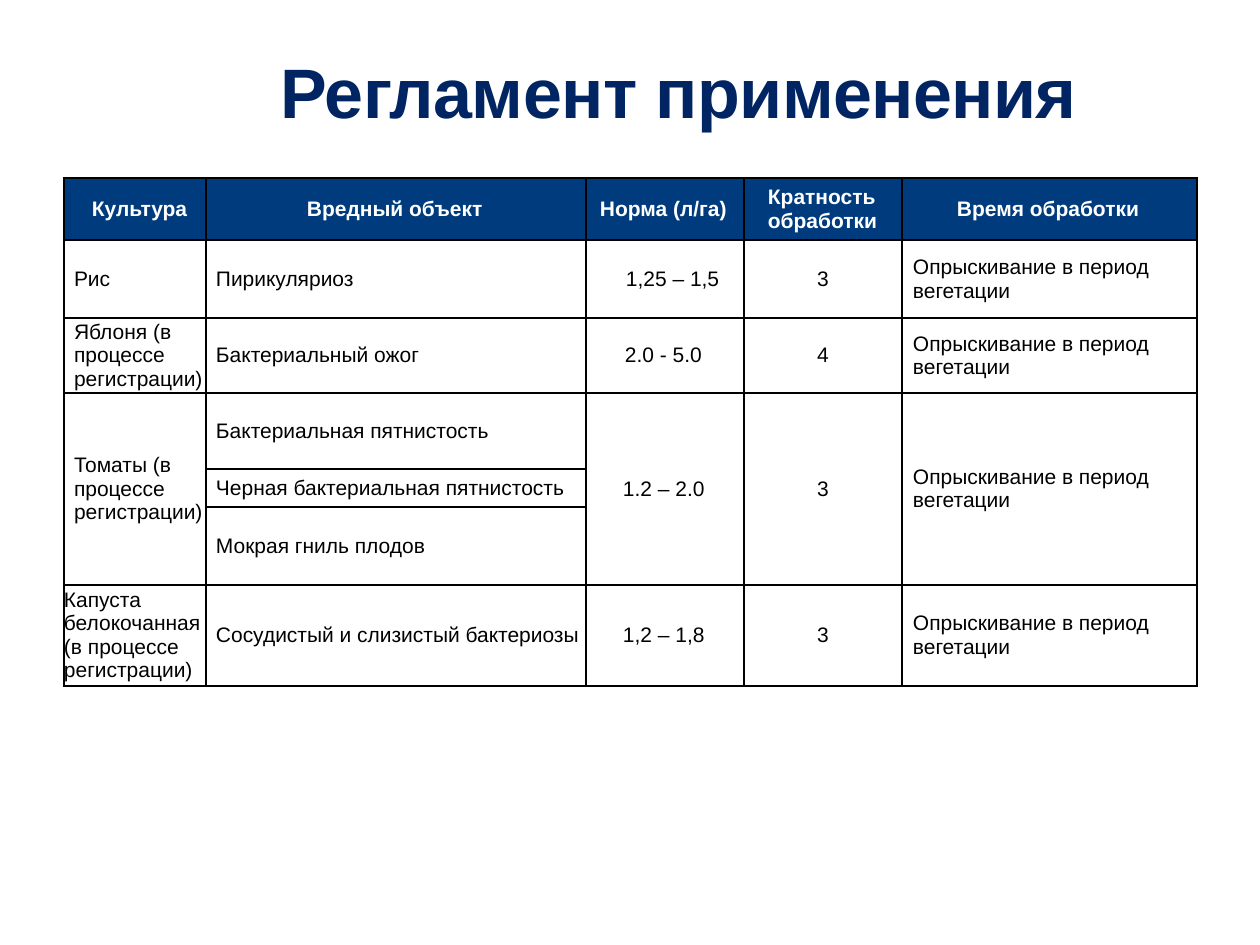
from lxml import etree
from pptx import Presentation
from pptx import util as u
from pptx.dml.color import RGBColor
from pptx.enum import text
from pptx.oxml.ns import qn

PX = 914400 // 126
COLUMNS = [142, 380, 158, 158, 295]
ROWS = [62, 78, 75, 76, 38, 78, 101]
TIMING = ("Опрыскивание в период вегетации", 11)
CENTRED = None

# Each cell is (text, left indent in px or CENTRED); an empty slot belongs to the merged cell above.
CELLS = [
    [("Культура", 28), ("Вредный объект", 101), ("Норма (л/га)", 14),
     ("Кратность обработки", 24), ("Время обработки", 55)],
    [("Рис", 10), ("Пирикуляриоз", 10), ("1,25 – 1,5", 40), ("3", CENTRED),
     ("Опрыскивание в период\nвегетации", 11)],
    [("Яблоня (в процессе регистрации)", 10), ("Бактериальный ожог", 10),
     ("2.0 - 5.0", 39), ("4", CENTRED), TIMING],
    [("Томаты (в процессе регистрации)", 10), ("Бактериальная пятнистость", 10),
     ("1.2 – 2.0", 37), ("3", CENTRED), TIMING],
    [None, ("Черная бактериальная пятнистость", 10), None, None, None],
    [None, ("Мокрая гниль плодов", 10), None, None, None],
    [("Капуста белокочанная (в процессе регистрации)", 0),
     ("Сосудистый и слизистый бактериозы", 10), ("1,2 – 1,8", 37),
     ("3", CENTRED), TIMING],
]
TOMATO_ROWS = (3, 5)


def px(*lengths):
    return [u.Emu(length * PX) for length in lengths]


def color(value):
    return RGBColor.from_string(value)


def style(para, size, value, bold, indent):
    """Sets the font and either the left indent or, for CENTRED, the alignment."""
    if indent is CENTRED:
        para.alignment = text.PP_ALIGN.CENTER
    else:
        properties = para._p.get_or_add_pPr()
        properties.set("marL", str(indent * PX))
        properties.set("indent", "0")
    para.font.name = "Arial"
    para.font.size = u.Pt(size)
    para.font.bold = bold
    para.font.color.rgb = color(value)


def add_borders(cell):
    properties = cell._tc.get_or_add_tcPr()
    for side in ("a:lnL", "a:lnR", "a:lnT", "a:lnB"):
        line = etree.SubElement(properties, qn(side), w=str(u.Pt(1)))
        fill = etree.SubElement(line, qn("a:solidFill"))
        etree.SubElement(fill, qn("a:srgbClr"), val="000000")


def fill_title(page, box):
    title = page.shapes.title
    title.left, title.top, title.width, title.height = px(*box)
    frame = title.text_frame
    frame.margin_left = frame.margin_right = frame.margin_top = frame.margin_bottom = 0
    frame.auto_size = text.MSO_AUTO_SIZE.NONE
    frame.vertical_anchor = text.MSO_ANCHOR.TOP
    frame.text = "Регламент применения"
    para = frame.paragraphs[0]
    style(para, 40, "002562", True, 126)
    para.alignment = text.PP_ALIGN.CENTER
    para.runs[0].font._element.set("spc", "-30")


def fill_cell(cell, content, header):
    cell.margin_left = cell.margin_right = cell.margin_top = cell.margin_bottom = 0
    cell.vertical_anchor = text.MSO_ANCHOR.MIDDLE
    add_borders(cell)
    if header:
        cell.fill.solid()
        cell.fill.fore_color.rgb = color("003C7D")
    else:
        cell.fill.background()
    words, indent = content or ("", 0)
    cell.text_frame.text = words
    for para in cell.text_frame.paragraphs:
        style(para, 12, "FFFFFF" if header else "000000", header, indent)


def add_rules_table(page, left, top):
    frame = page.shapes.add_table(
        len(ROWS), len(COLUMNS), *px(left, top, sum(COLUMNS), sum(ROWS)))
    table = frame.table
    table.horz_banding = False
    for column, width in zip(table.columns, px(*COLUMNS)):
        column.width = width
    for row, height in zip(table.rows, px(*ROWS)):
        row.height = height
    for r, contents in enumerate(CELLS):
        for c, content in enumerate(contents):
            fill_cell(table.cell(r, c), content, r == 0)
    first, last = TOMATO_ROWS
    for c, content in enumerate(CELLS[last]):
        if content is None:
            table.cell(first, c).merge(table.cell(last, c))


def main():
    deck = Presentation()
    deck.slide_width, deck.slide_height = px(1260, 945)
    page = deck.slides.add_slide(deck.slide_layouts[5])
    fill_title(page, (59, 48, 1113, 50))
    add_rules_table(page, 64, 178)
    deck.save("out.pptx")


if __name__ == "__main__":
    main()
